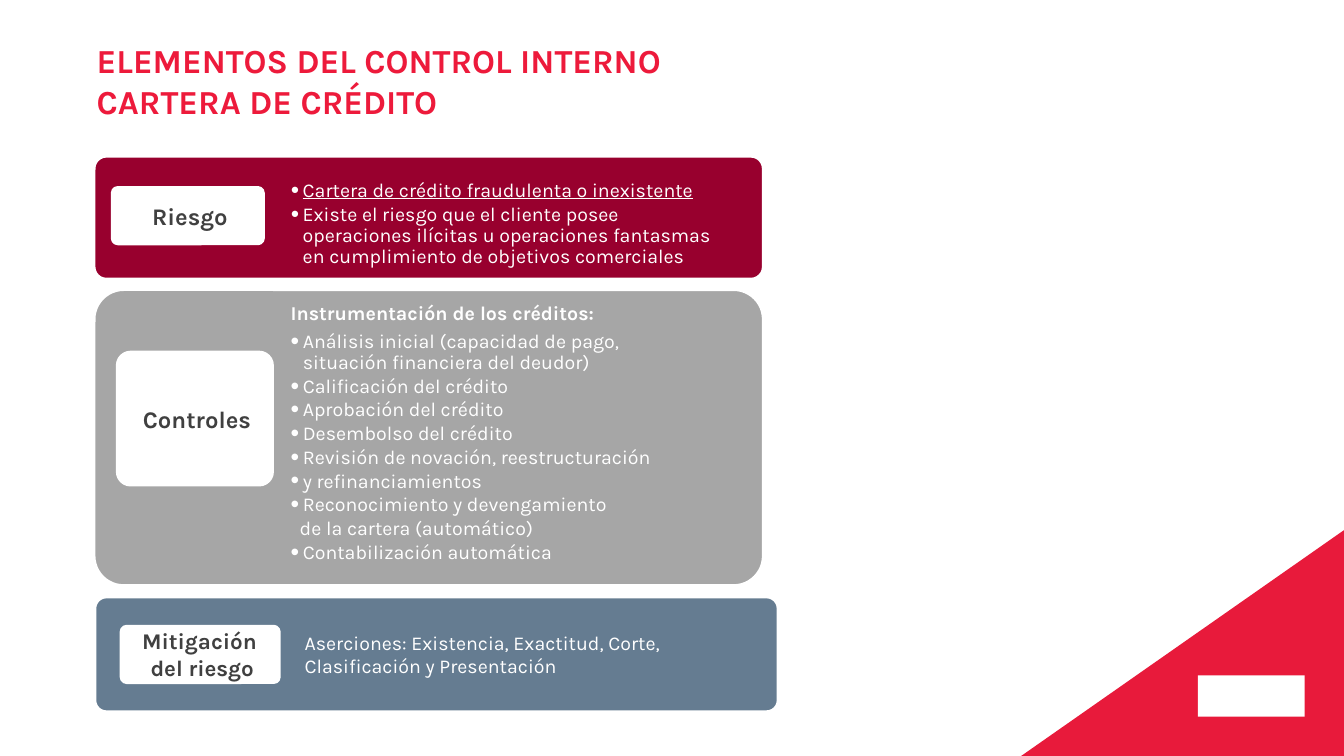
from lxml.etree import SubElement
from pptx import Presentation
from pptx.dml.color import RGBColor
from pptx.enum.shapes import MSO_SHAPE
from pptx.enum.text import MSO_ANCHOR, PP_ALIGN
from pptx.oxml.ns import qn
from pptx.util import Pt

COLORS = {
    "red": "E81A3B",
    "title": "ED1A3B",
    "risk": "98002E",
    "controls": "A6A6A6",
    "mitigation": "657C91",
    "label": "404040",
    "white": "FFFFFF",
}
FONT = "Karla"
HANGING = 8.64

CONTROLS = [
    "Análisis inicial (capacidad de pago,\vsituación financiera del deudor)",
    "Calificación del crédito",
    "Aprobación del crédito",
    "Desembolso del crédito",
    "Revisión de novación, reestructuración",
    "y refinanciamientos",
    "Reconocimiento y devengamiento",
    "de la cartera (automático)",
    "Contabilización automática",
]
UNBULLETED = "de la cartera (automático)"


def color(name):
    return RGBColor.from_string(COLORS[name])


def add_text(frame, text, size=14, font_color="white", bold=False, underline=False,
             align=PP_ALIGN.LEFT, line_spacing=1.0, space_after=0):
    """Write one paragraph, reusing the empty first one of the frame."""
    paragraph = frame.paragraphs[0]
    if paragraph.runs:
        paragraph = frame.add_paragraph()
    paragraph.text = text
    paragraph.alignment = align
    paragraph.line_spacing = line_spacing
    paragraph.space_before = Pt(0)
    paragraph.space_after = Pt(space_after)
    for run in paragraph.runs:
        run.font.name = FONT
        run.font.size = Pt(size)
        run.font.bold = bold
        run.font.underline = underline
        run.font.color.rgb = color(font_color)
    return paragraph


def set_bullet(paragraph, character, percent):
    properties = paragraph._p.get_or_add_pPr()
    properties.set("marL", str(Pt(HANGING)))
    properties.set("indent", str(-Pt(HANGING)))
    bullet_color = SubElement(properties, qn("a:buClr"))
    SubElement(bullet_color, qn("a:srgbClr"), val=COLORS["white"])
    SubElement(properties, qn("a:buSzPct"), val=str(percent * 1000))
    SubElement(properties, qn("a:buFont"), typeface="Arial")
    SubElement(properties, qn("a:buChar"), char=character)


def clear_margins(frame):
    frame.word_wrap = True
    frame.margin_left = frame.margin_top = frame.margin_right = frame.margin_bottom = 0


def add_text_box(slide, left, top, width, height, anchor=MSO_ANCHOR.TOP):
    frame = slide.shapes.add_textbox(Pt(left), Pt(top), Pt(width), Pt(height)).text_frame
    clear_margins(frame)
    frame.vertical_anchor = anchor
    return frame


def add_block(slide, left, top, width, height, fill, kind=MSO_SHAPE.ROUNDED_RECTANGLE):
    shape = slide.shapes.add_shape(kind, Pt(left), Pt(top), Pt(width), Pt(height))
    if kind == MSO_SHAPE.ROUNDED_RECTANGLE:
        shape.adjustments[0] = 0.1
    shape.shadow.inherit = False
    shape.fill.solid()
    shape.fill.fore_color.rgb = color(fill)
    shape.line.color.rgb = color("white")
    shape.line.width = Pt(2)
    return shape


def add_panel(slide, box, fill, label, label_box, label_size=17):
    """Draw a coloured panel with a white label; label_box is relative to the panel."""
    left, top, width, height = box
    add_block(slide, left, top, width, height, fill)
    label_left, label_top, label_width, label_height = label_box
    shape = add_block(slide, left + label_left, top + label_top,
                      label_width, label_height, "white")
    frame = shape.text_frame
    clear_margins(frame)
    frame.margin_left = Pt(3)
    frame.vertical_anchor = MSO_ANCHOR.MIDDLE
    add_text(frame, label, size=label_size, font_color="label", bold=True,
             align=PP_ALIGN.CENTER)


def add_title(slide, left, top, width, height):
    frame = add_text_box(slide, left, top, width, height, MSO_ANCHOR.MIDDLE)
    frame.vertical_anchor = MSO_ANCHOR.TOP
    for line in ("ELEMENTOS DEL CONTROL INTERNO", "CARTERA DE CRÉDITO"):
        add_text(frame, line, size=24, font_color="title", bold=True)


def add_risk(slide, left, top, width, height):
    add_panel(slide, (left, top, width, height), "risk", "Riesgo", (13, 22.3, 108, 40.3))
    frame = add_text_box(slide, left + 140.4, top + 17.3, width - 143.4, height - 20)
    entries = [
        ("Cartera de crédito fraudulenta o inexistente", True),
        ("Existe el riesgo que el cliente posee\voperaciones ilícitas u operaciones fantasmas"
         "\ven cumplimiento de objetivos comerciales", False),
    ]
    for text, underline in entries:
        paragraph = add_text(frame, text, underline=underline,
                             line_spacing=0.9, space_after=1.8)
        set_bullet(paragraph, "●", 75)


def add_controls(slide, left, top, width, height):
    add_panel(slide, (left, top, width, height), "controls", "Controles",
              (16.6, 44.6, 110.9, 95))
    frame = add_text_box(slide, left + 140.4, top + 10, width - 142.4, height - 12)
    add_text(frame, "Instrumentación de los créditos:", bold=True,
             line_spacing=0.9, space_after=4.6)
    for text in CONTROLS:
        paragraph = add_text(frame, text, line_spacing=0.9, space_after=1.8)
        if text == UNBULLETED:
            paragraph._p.get_or_add_pPr().set("marL", str(Pt(6.5)))
        else:
            set_bullet(paragraph, "•", 125)


def add_mitigation(slide, left, top, width, height):
    add_panel(slide, (left, top, width, height), "mitigation",
              "Mitigación \vdel riesgo", (18.7, 20.9, 113, 40.3), label_size=16)
    frame = add_text_box(slide, left + 149.8, top, width - 181, height, MSO_ANCHOR.MIDDLE)
    add_text(frame, "Aserciones: Existencia, Exactitud, Corte, Clasificación y Presentación")


def add_corner(slide, left, top, width, height):
    """Fill the lower right corner and mark the emblem's place with a white block."""
    right, bottom = left + width, top + height
    builder = slide.shapes.build_freeform(Pt(right), Pt(top))
    builder.add_line_segments([(Pt(left), Pt(bottom)), (Pt(right), Pt(bottom))], close=True)
    triangle = builder.convert_to_shape()
    triangle.shadow.inherit = False
    triangle.fill.solid()
    triangle.fill.fore_color.rgb = color("red")
    triangle.line.fill.background()
    emblem = add_block(slide, right - 104.4, bottom - 57.6, 76.3, 29.5, "white",
                       MSO_SHAPE.RECTANGLE)
    emblem.line.fill.background()


def main():
    presentation = Presentation()
    presentation.slide_width = Pt(960)
    presentation.slide_height = Pt(540)
    slide = presentation.slides.add_slide(presentation.slide_layouts[6])
    add_corner(slide, 729.4, 378.7, 230.6, 161.3)
    add_title(slide, 69.1, 28.8, 537, 80.6)
    add_risk(slide, 67.2, 111.6, 478, 87.8)
    add_controls(slide, 67.2, 206.9, 478, 211.4)
    add_mitigation(slide, 67.8, 426.4, 488, 82)
    presentation.save("out.pptx")


if __name__ == "__main__":
    main()
